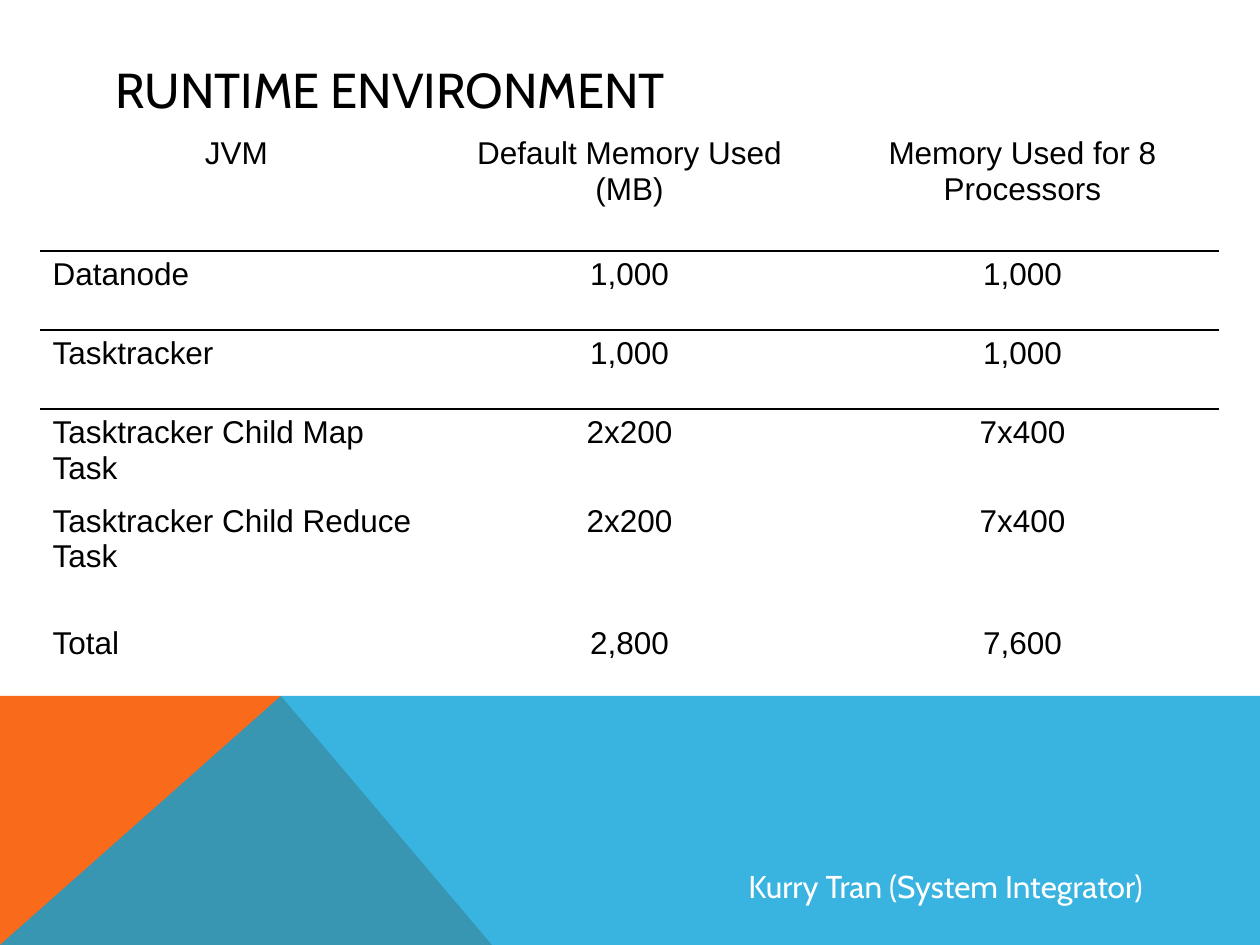
from lxml.etree import SubElement
from pptx import Presentation
from pptx.dml.color import RGBColor
from pptx.enum.text import MSO_ANCHOR, PP_ALIGN
from pptx.oxml.ns import qn
from pptx.util import Pt

PX = 914400 // 126
W, H = 1260, 945

BLACK = RGBColor(0x00, 0x00, 0x00)
WHITE = RGBColor(0xFF, 0xFF, 0xFF)
ORANGE = RGBColor(0xF9, 0x6A, 0x1B)
BLUE = RGBColor(0x08, 0xA1, 0xD9)
NO_STYLE = "{2D5ABB26-0587-4C30-8999-92F81FD0307C}"

# Content
TITLE = "RUNTIME ENVIRONMENT"
AUTHOR = "Kurry Tran (System Integrator)"
ROWS = [
    ("JVM", "Default Memory Used (MB)", "Memory Used for 8 Processors"),
    ("Datanode", "1,000", "1,000"),
    ("Tasktracker", "1,000", "1,000"),
    ("Tasktracker Child Map Task", "2x200", "7x400"),
    ("Tasktracker Child Reduce Task", "2x200", "7x400"),
    ("Total", "2,800", "7,600"),
]
ROW_HEIGHTS = [121, 79, 79, 86, 122, 52]
COL_WIDTH = 393
RULED_ROWS = (0, 1)  # rows with a line below

# Footer band: outline, colour, opacity in percent
BAND_TOP, PEAK = 696, 281
BAND = [
    ([(0, H), (0, BAND_TOP), (PEAK, BAND_TOP), (492, H)], ORANGE, 100),
    ([(0, H), (PEAK, BAND_TOP), (W, BAND_TOP), (W, H)], BLUE, 80),
]


def add_run(p, text, size, font, color):
    r = p.add_run()
    r.text = text
    r.font.size = Pt(size)
    r.font.name = font
    r.font.color.rgb = color


def add_text(slide, box, text, size, color, wrap):
    tf = slide.shapes.add_textbox(*(v * PX for v in box)).text_frame
    tf.word_wrap = wrap
    tf.vertical_anchor = MSO_ANCHOR.MIDDLE
    add_run(tf.paragraphs[0], text, size, "Cabin", color)


def add_polygon(slide, points, color, opacity):
    fb = slide.shapes.build_freeform(*points[0], scale=PX)
    fb.add_line_segments(points[1:], close=True)
    sp = fb.convert_to_shape()
    sp.shadow.inherit = False
    sp.line.fill.background()
    sp.fill.solid()
    sp.fill.fore_color.rgb = color
    if opacity < 100:
        clr = next(sp.element.spPr.iter(qn("a:srgbClr")))
        SubElement(clr, qn("a:alpha"), val=str(opacity * 1000))


def add_border(cell, side):
    tc_pr = cell._tc.get_or_add_tcPr()
    ln = SubElement(tc_pr, qn(f"a:{side}"), w=str(Pt(1)))
    fill = SubElement(ln, qn("a:solidFill"))
    SubElement(fill, qn("a:srgbClr"), val=str(BLACK))


def add_memory_table(slide, left, top):
    frame = slide.shapes.add_table(
        len(ROWS), len(ROWS[0]), left * PX, top * PX,
        COL_WIDTH * len(ROWS[0]) * PX, sum(ROW_HEIGHTS) * PX)
    table = frame.table
    table.first_row = table.horz_banding = False
    next(frame.element.iter(qn("a:tableStyleId"))).text = NO_STYLE
    for col in table.columns:
        col.width = COL_WIDTH * PX
    for i, (texts, height) in enumerate(zip(ROWS, ROW_HEIGHTS)):
        table.rows[i].height = height * PX
        for j, text in enumerate(texts):
            cell = table.cell(i, j)
            p = cell.text_frame.paragraphs[0]
            p.alignment = PP_ALIGN.CENTER if i == 0 or j > 0 else PP_ALIGN.LEFT
            add_run(p, text, 18, "Arial", BLACK)
            if i - 1 in RULED_ROWS:
                add_border(cell, "lnT")
            if i in RULED_ROWS:
                add_border(cell, "lnB")
            cell.fill.background()


def main():
    prs = Presentation()
    prs.slide_width, prs.slide_height = W * PX, H * PX
    slide = prs.slides.add_slide(prs.slide_layouts[6])

    # Footer band
    for points, color, opacity in BAND:
        add_polygon(slide, points, color, opacity)

    # Title, table and author
    add_text(slide, (103, 51, 1036, 76), TITLE, 28, BLACK, True)
    add_memory_table(slide, 40, 130)
    add_text(slide, (736, 860, 424, 51), AUTHOR, 18, WHITE, False)

    prs.save("out.pptx")


if __name__ == "__main__":
    main()
